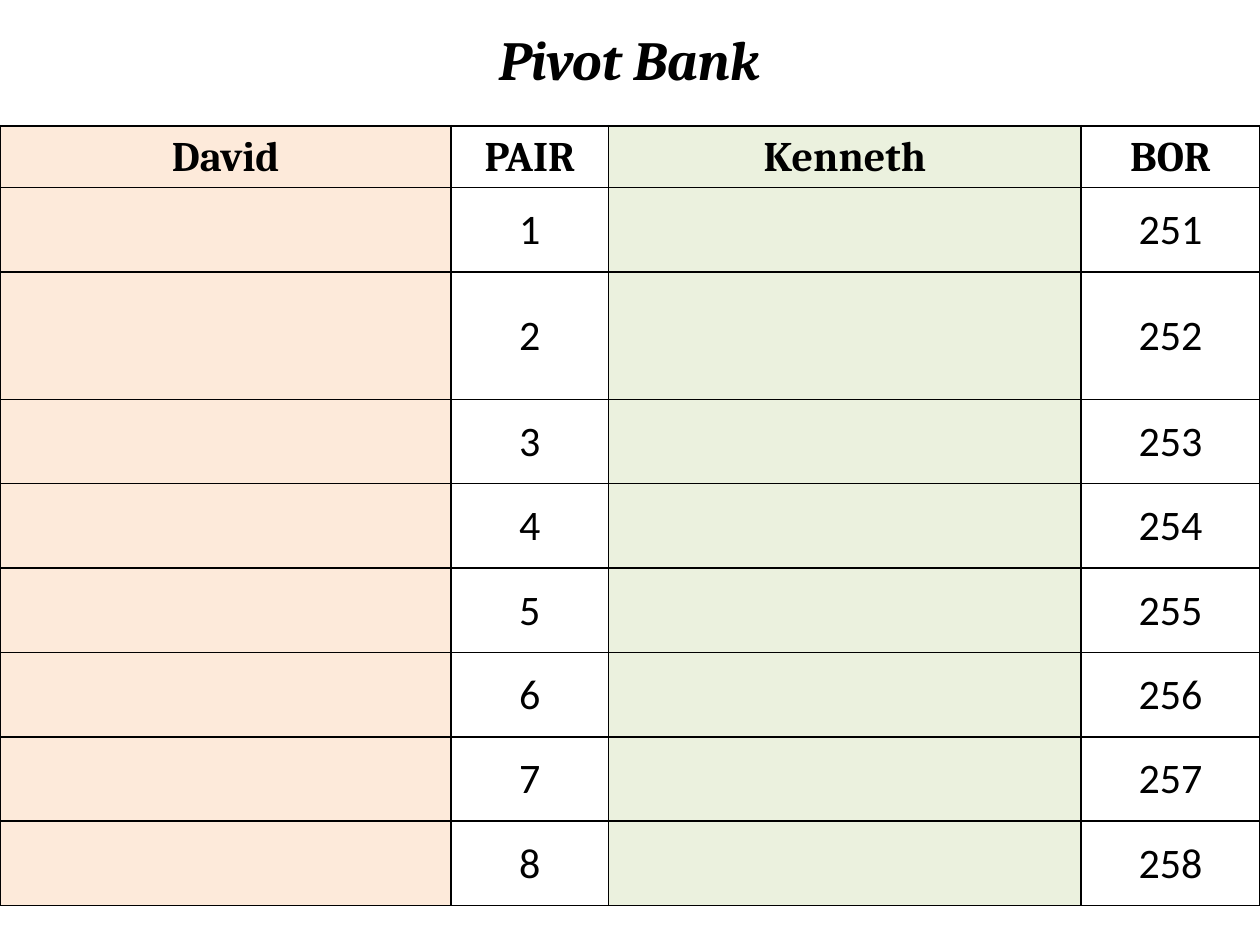
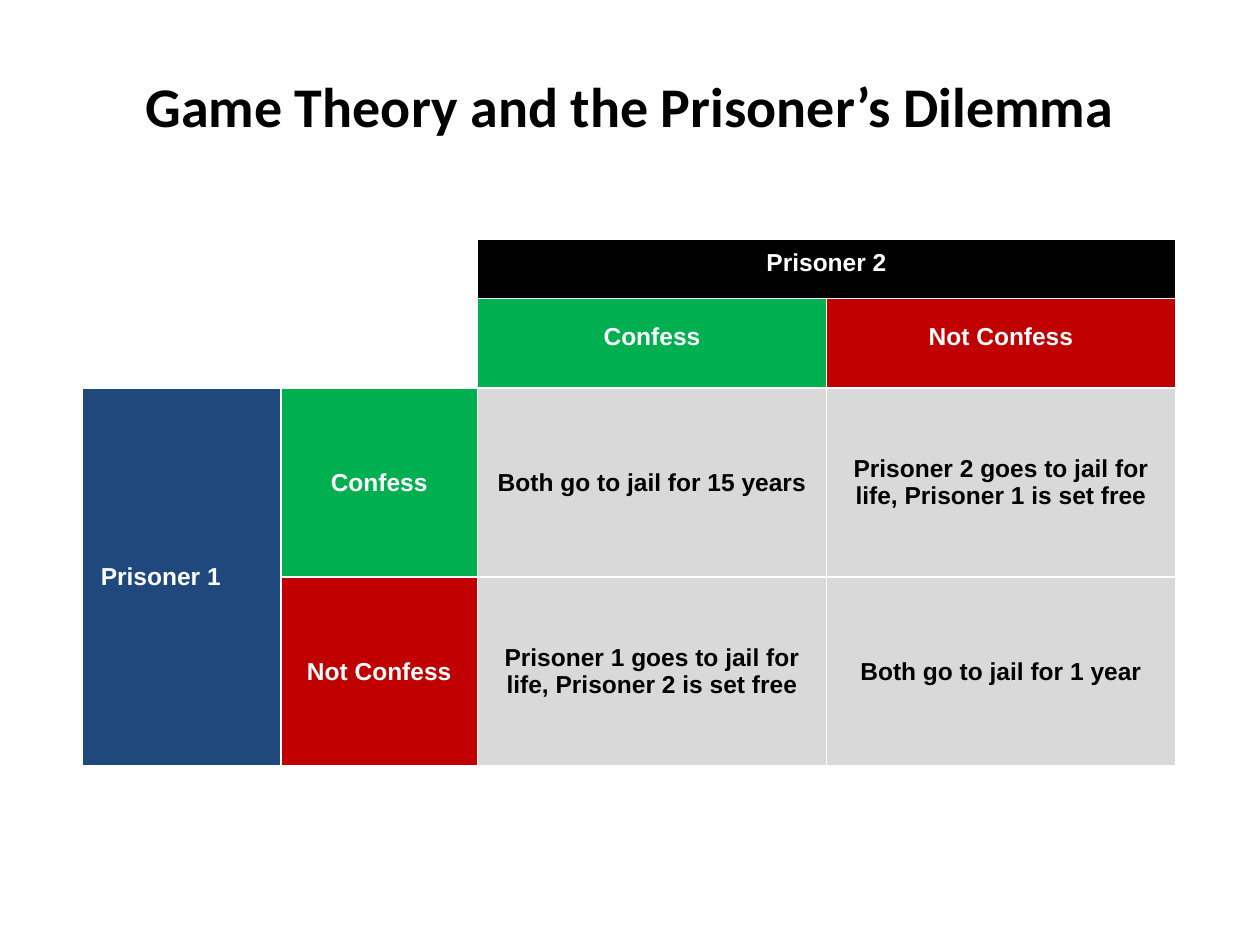
from lxml.etree import SubElement
from pptx import Presentation
from pptx.dml.color import RGBColor
from pptx.enum.text import MSO_ANCHOR, PP_ALIGN
from pptx.oxml.ns import qn
from pptx.util import Inches, Pt

COLORS = {
    "black": "000000", "white": "FFFFFF", "peach": "FDEADA", "sage": "EBF1DE",
    "green": "00B050", "red": "C00000", "navy": "1F497D", "gray": "D9D9D9",
}
HEADER_INSETS = (0.1, 0, 0.1, 0.1)
BODY_INSETS = (0.15,) * 4


def write_text(frame, text, font="Calibri", size=24, color="black", bold=False,
               italic=False, align=PP_ALIGN.CENTER):
    para = frame.paragraphs[0]
    para.alignment = align
    span = para.add_run()
    span.text = text
    span.font.name = font
    span.font.size = Pt(size)
    span.font.bold = bold
    span.font.italic = italic
    span.font.color.rgb = RGBColor.from_string(COLORS[color])


def add_title(page, box, text, **style):
    frame = page.shapes.add_textbox(*map(Inches, box)).text_frame
    frame.word_wrap = True
    frame.vertical_anchor = MSO_ANCHOR.MIDDLE
    write_text(frame, text, bold=True, **style)


def add_grid(page, left, top, widths, heights):
    """Add an unbanded table with the given column widths and row heights."""
    box = (left, top, sum(widths), sum(heights))
    table = page.shapes.add_table(len(heights), len(widths), *map(Inches, box)).table
    table.first_row = table.horz_banding = False
    for column, width in zip(table.columns, widths):
        column.width = Inches(width)
    for row, height in zip(table.rows, heights):
        row.height = Inches(height)
    return table


def style_cell(cell, fill, border, insets, top_width=1):
    cell.vertical_anchor = MSO_ANCHOR.MIDDLE
    (cell.margin_left, cell.margin_top,
     cell.margin_right, cell.margin_bottom) = map(Inches, insets)
    properties = cell._tc.get_or_add_tcPr()
    for side in "LRTB":
        width = top_width if side == "T" else 1
        line = SubElement(properties, qn(f"a:ln{side}"), w=str(Pt(width)))
        solid = SubElement(line, qn("a:solidFill"))
        SubElement(solid, qn("a:srgbClr"), val=COLORS[border])
    cell.fill.solid()
    cell.fill.fore_color.rgb = RGBColor.from_string(COLORS[fill])


def add_pair_table(page, left, top):
    heights = [0.49, 0.67, 1.01] + [0.67] * 6
    table = add_grid(page, left, top, [3.58, 1.25, 3.75, 1.42], heights)
    fills = ["peach", "white", "sage", "white"]
    rows = [["David", "PAIR", "Kenneth", "BOR"]]
    rows += [["", str(pair), "", str(250 + pair)] for pair in range(1, 9)]
    for r, texts in enumerate(rows):
        is_header = r == 0
        for c, text in enumerate(texts):
            cell = table.cell(r, c)
            style_cell(cell, fills[c], "black", (0.01, 0.01, 0.01, 0),
                       top_width=1.5 if is_header else 1)
            if text:
                write_text(cell.text_frame, text, bold=is_header,
                           font="Cambria" if is_header else "Calibri")


def add_payoff_table(page, left, top):
    table = add_grid(page, left, top, [1.58, 1.56, 2.77, 2.77], [0.47, 0.71, 1.5, 1.5])
    blank = ("", "white")
    confess, deny = ("Confess", "green"), ("Not Confess", "red")
    first, second = ("Prisoner 1", "navy"), ("Prisoner 2", "black")
    rows = [
        [blank, blank, second, ("", "black")],
        [blank, blank, confess, deny],
        [first, confess, ("Both go to jail for 15 years", "gray"),
         ("Prisoner 2 goes to jail for life, Prisoner 1 is set free", "gray")],
        [("", "navy"), deny,
         ("Prisoner 1 goes to jail for life, Prisoner 2 is set free", "gray"),
         ("Both go to jail for 1 year", "gray")],
    ]
    for r, entries in enumerate(rows):
        for c, (text, fill) in enumerate(entries):
            cell = table.cell(r, c)
            style_cell(cell, fill, "white", HEADER_INSETS if r < 2 else BODY_INSETS)
            if text:
                write_text(cell.text_frame, text, font="Arial", size=14, bold=True,
                           color="black" if fill == "gray" else "white",
                           align=PP_ALIGN.LEFT if c == 0 else PP_ALIGN.CENTER)
    for start, end in [((0, 0), (1, 1)), ((0, 2), (0, 3)), ((2, 0), (3, 0))]:
        table.cell(*start).merge(table.cell(*end))


def main():
    deck = Presentation()
    deck.slide_width, deck.slide_height = Inches(10), Inches(7.5)
    blank_layout = deck.slide_layouts[6]

    page = deck.slides.add_slide(blank_layout)
    add_title(page, (1.66, 0.25, 6.67, 0.42), "Pivot Bank",
              font="Cambria", size=31.5, italic=True)
    add_pair_table(page, 0, 1)

    page = deck.slides.add_slide(blank_layout)
    add_title(page, (0.5, 0.21, 9, 1.25), "Game Theory and the Prisoner’s Dilemma", size=32)
    add_payoff_table(page, 0.65, 1.9)

    deck.save("out.pptx")


if __name__ == "__main__":
    main()
